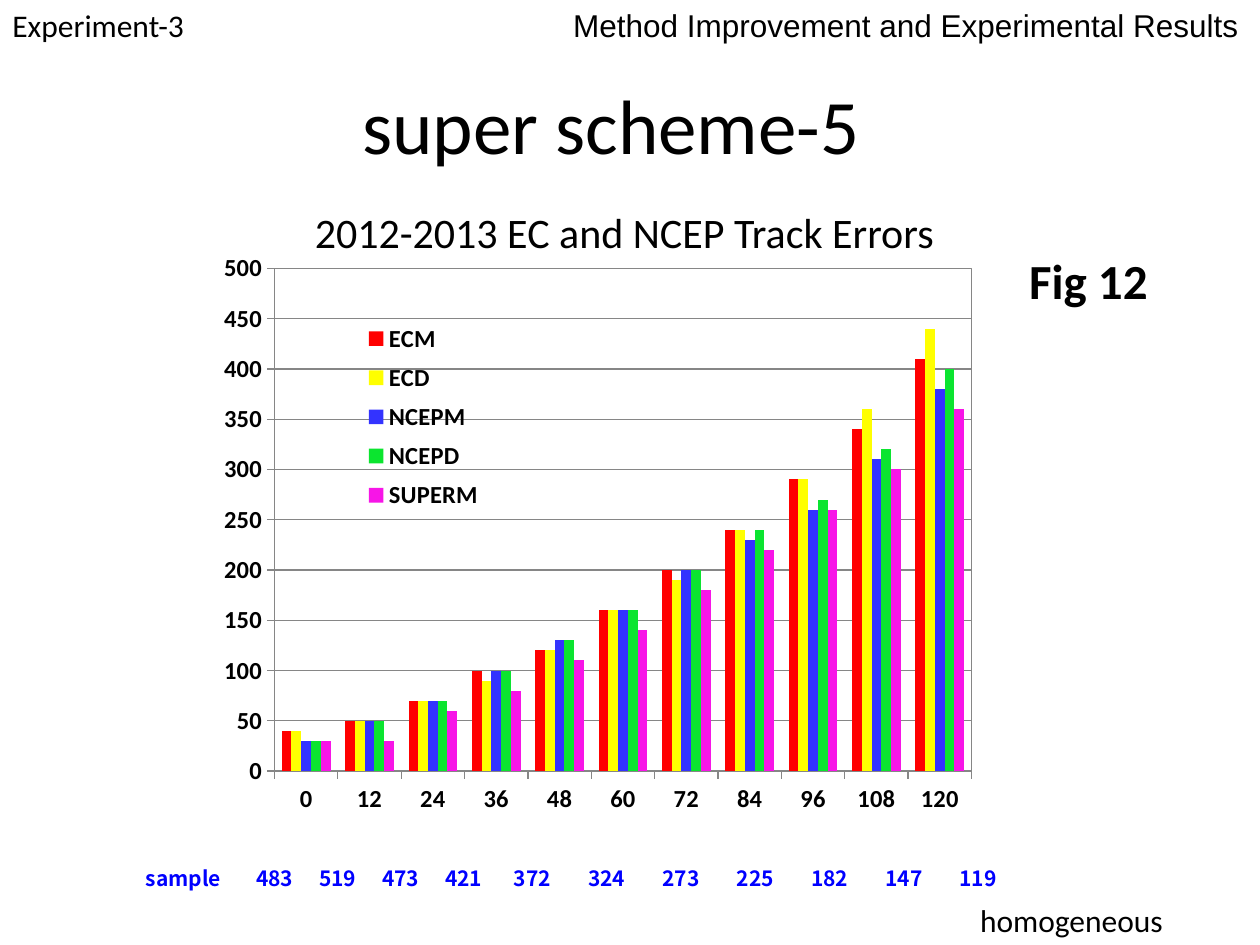
"""Build the super scheme-5 track error slide."""
from lxml import etree
from pptx import Presentation
from pptx import util as u
from pptx.chart import data as cd
from pptx.dml.color import RGBColor
from pptx.enum import chart as ce, text as te
from pptx.oxml import ns

BLACK = RGBColor(0, 0, 0)
BLUE = RGBColor(0, 0, 255)
GREY = RGBColor(0x86, 0x86, 0x86)
BODY = "Calibri"

TITLE = ("super scheme-5", (0.35, 0.36, 9, 1.25), 44)
LABELS = [
    ("homogeneous", (7.68, 7.1, 2.13, 0.4), 18, BODY, False, "TOP"),
    ("2012-2013 EC and NCEP Track Errors", (2.4, 1.39, 5.74, 0.9), 24, BODY, False, "MIDDLE"),
    ("Fig 12", (8.07, 1.94, 1.18, 0.57), 28, BODY, True, "TOP"),
    ("Method Improvement and Experimental Results", (4.45, 0, 5.55, 0.4), 18, "Arial", False, "TOP"),
    ("Experiment-3", (0, 0, 3.03, 0.4), 18, BODY, False, "TOP"),
]
HOURS = [str(hour) for hour in range(0, 121, 12)]
ERRORS = [
    ("ECM", RGBColor(0xFF, 0, 0), [40, 50, 70, 100, 120, 160, 200, 240, 290, 340, 410]),
    ("ECD", RGBColor(0xFF, 0xFF, 0), [40, 50, 70, 90, 120, 160, 190, 240, 290, 360, 440]),
    ("NCEPM", RGBColor(0x33, 0x33, 0xFF), [30, 50, 70, 100, 130, 160, 200, 230, 260, 310, 380]),
    ("NCEPD", RGBColor(0x0B, 0xE5, 0x2F), [30, 50, 70, 100, 130, 160, 200, 240, 270, 320, 400]),
    ("SUPERM", RGBColor(0xF7, 0x15, 0xE7), [30, 30, 60, 80, 110, 140, 180, 220, 260, 300, 360]),
]
CHART = (1.61, 1.94, 6.61, 4.64)
PLOT = (0.086, 0.041, 0.837, 0.86)
LEGEND = (0.19, 0.12, 0.15, 0.35)
SAMPLE = ["sample", 483, 519, 473, 421, 372, 324, 273, 225, 182, 147, 119]
TABLE = (0.98, 6.74, 7.09, 0.45)
WIDTHS = [0.95] + [0.5] * 4 + [0.59] * 7


def box(at):
    return [u.Inches(part) for part in at]


def style(font, size, name, color, bold):
    font.size, font.name, font.bold = u.Pt(size), name, bold
    font.color.rgb = color


def write(frame, words, size, name=BODY, color=BLACK, bold=False, align=te.PP_ALIGN.LEFT):
    para = frame.paragraphs[0]
    para.alignment = align
    run = para.add_run()
    run.text = words
    style(run.font, size, name, color, bold)


def layout(at, inner=False):
    root = etree.Element(ns.qn("c:layout"))
    manual = etree.SubElement(root, ns.qn("c:manualLayout"))
    parts = [("layoutTarget", "inner")] if inner else []
    parts += [("xMode", "edge"), ("yMode", "edge")] + list(zip("xywh", at))
    for tag, val in parts:
        etree.SubElement(manual, ns.qn("c:" + tag)).set("val", str(val))
    return root


def place(node, at, after, inner=False):
    for old in node.findall(ns.qn("c:layout")):
        node.remove(old)
    new = layout(at, inner)
    if after is None:
        node.insert(0, new)
    else:
        after.addnext(new)


def frame_plot(area):
    shape = etree.SubElement(area, ns.qn("c:spPr"))
    etree.SubElement(shape, ns.qn("a:noFill"))
    fill = etree.SubElement(etree.SubElement(shape, ns.qn("a:ln"), w="9525"), ns.qn("a:solidFill"))
    etree.SubElement(fill, ns.qn("a:srgbClr"), val=str(GREY))


def add_errors(slide):
    data = cd.CategoryChartData()
    data.categories = HOURS
    for name, _, vals in ERRORS:
        data.add_series(name, vals)
    chart = slide.shapes.add_chart(ce.XL_CHART_TYPE.COLUMN_CLUSTERED, *box(CHART), data).chart
    style(chart.font, 14, BODY, BLACK, True)
    chart.has_title = False
    plot = chart.plots[0]
    plot.gap_width, plot.overlap, plot.vary_by_categories = 150, 0, False
    for series, (_, color, _) in zip(plot.series, ERRORS):
        series.format.fill.solid()
        series.format.fill.fore_color.rgb = color
    for axis in (chart.category_axis, chart.value_axis):
        axis.major_tick_mark = ce.XL_TICK_MARK.OUTSIDE
        axis.format.line.color.rgb = GREY
    rise = chart.value_axis
    rise.minimum_scale, rise.maximum_scale, rise.major_unit = 0, 500, 50
    rise.has_major_gridlines = True
    rise.major_gridlines.format.line.color.rgb = GREY
    chart.has_legend = True
    key = chart.legend
    key.position, key.include_in_layout = ce.XL_LEGEND_POSITION.RIGHT, False
    node = chart.element.find(".//" + ns.qn("c:legend"))
    place(node, LEGEND, node.find(ns.qn("c:legendPos")))
    area = chart.element.find(".//" + ns.qn("c:plotArea"))
    place(area, PLOT, None, True)
    frame_plot(area)


def add_sample(slide):
    table = slide.shapes.add_table(1, len(SAMPLE), *box(TABLE)).table
    table.first_row = table.horz_banding = False
    for col, width, cell, item in zip(table.columns, WIDTHS, table.rows[0].cells, SAMPLE):
        col.width = u.Inches(width)
        cell.fill.background()
        cell.vertical_anchor = te.MSO_ANCHOR.MIDDLE
        cell.margin_left = cell.margin_right = cell.margin_top = cell.margin_bottom = 0
        write(cell.text_frame, str(item), 12, "Noto Sans CJK SC", BLUE, True, te.PP_ALIGN.CENTER)


def main():
    deck = Presentation()
    deck.slide_width, deck.slide_height = u.Inches(10), u.Inches(7.5)
    slide = deck.slides.add_slide(deck.slide_layouts[5])
    add_errors(slide)
    add_sample(slide)
    words, at, size = TITLE
    head = slide.shapes.title
    head.left, head.top, head.width, head.height = box(at)
    head.text_frame.vertical_anchor = te.MSO_ANCHOR.MIDDLE
    write(head.text_frame, words, size, align=te.PP_ALIGN.CENTER)
    for words, at, size, name, bold, anchor in LABELS:
        frame = slide.shapes.add_textbox(*box(at)).text_frame
        frame.word_wrap = True
        frame.vertical_anchor = te.MSO_ANCHOR[anchor]
        write(frame, words, size, name, bold=bold)
    deck.save("out.pptx")


if __name__ == "__main__":
    main()
